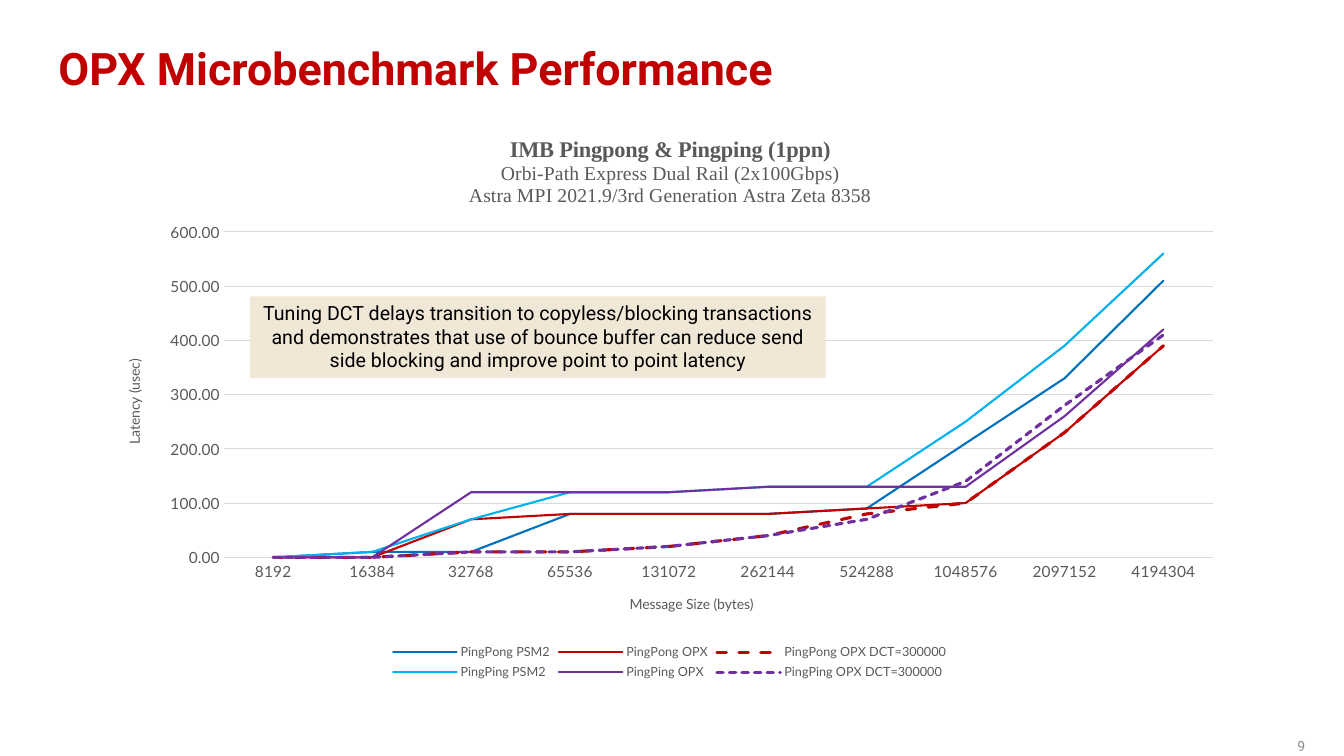
from dataclasses import dataclass

from lxml import etree
from pptx import Presentation
from pptx.chart.data import CategoryChartData
from pptx.dml.color import RGBColor
from pptx.enum import chart as charts, dml, shapes, text
from pptx.oxml.ns import qn
from pptx.util import Inches, Pt


@dataclass(frozen=True)
class Theme:
    """Colours, fonts and type sizes of the slide."""
    red: str = "C00000"
    blue: str = "0070C0"
    sky: str = "00B0F0"
    purple: str = "7030A0"
    black: str = "000000"
    grey: str = "595959"
    pale_grey: str = "8C8C8C"
    grid: str = "D9D9D9"
    sand: str = "F0E7D7"
    body: str = "Roboto"
    labels: str = "Lato"
    serif: str = "Times New Roman"
    heading: int = 32
    chart_heading: int = 16
    note: int = 14
    ticks: int = 11
    small: int = 10
    legend: int = 9


THEME = Theme()
SLIDE_SIZE = (13.33, 7.5)
CHART_BOX = (1.02, 1.14, 11.24, 5.65)
SIZES = [2 ** power for power in range(13, 23)]
LATENCIES = [
    ("PingPong PSM2", THEME.blue, None,
     (0, 10, 10, 80, 80, 80, 90, 210, 330, 510)),
    ("PingPong OPX", THEME.red, None,
     (0, 0, 70, 80, 80, 80, 90, 100, 230, 390)),
    ("PingPong OPX DCT=300000", THEME.red, dml.MSO_LINE.DASH,
     (0, 0, 10, 10, 20, 40, 80, 100, 230, 390)),
    ("PingPing PSM2", THEME.sky, None,
     (0, 10, 70, 120, 120, 130, 130, 250, 390, 560)),
    ("PingPing OPX", THEME.purple, None,
     (0, 0, 120, 120, 120, 130, 130, 130, 260, 420)),
    ("PingPing OPX DCT=300000", THEME.purple, dml.MSO_LINE.SQUARE_DOT,
     (0, 0, 10, 10, 20, 40, 70, 140, 280, 410)),
]


def style(font, size, face, color, bold=False):
    """Set size, typeface, colour and weight of a font."""
    font.size, font.name, font.bold = Pt(size), face, bold
    font.color.rgb = RGBColor.from_string(color)


def write(paragraph, words, *look, **weight):
    """Add one styled run to a paragraph."""
    run = paragraph.add_run()
    run.text = words
    style(run.font, *look, **weight)


def draw_line(line, color, width, dash=None):
    """Set colour, width and dash of a line."""
    line.color.rgb = RGBColor.from_string(color)
    line.width = Pt(width)
    if dash is not None:
        line.dash_style = dash


def arrange(element, index, *box):
    """Place a chart part by inches from the chart's corner."""
    for previous in element.findall(qn("c:layout")):
        element.remove(previous)
    layout = etree.Element(qn("c:layout"))
    manual = etree.SubElement(layout, qn("c:manualLayout"))
    if index == 0:
        etree.SubElement(manual, qn("c:layoutTarget"), val="inner")
    for mode in ("xMode", "yMode"):
        etree.SubElement(manual, qn(f"c:{mode}"), val="edge")
    for key, length, whole in zip("xywh", box, CHART_BOX[2:] * 2):
        etree.SubElement(manual, qn(f"c:{key}"), val=str(length / whole))
    element.insert(index, layout)


def add_heading(slide, box):
    """Fill the title placeholder."""
    heading = slide.shapes.title
    heading.left, heading.top, heading.width, heading.height = map(Inches, box)
    frame = heading.text_frame
    frame.auto_size = text.MSO_AUTO_SIZE.NONE
    frame.vertical_anchor = text.MSO_ANCHOR.MIDDLE
    line = frame.paragraphs[0]
    line.alignment, line.line_spacing = text.PP_ALIGN.LEFT, 0.9
    write(line, "OPX Microbenchmark Performance",
          THEME.heading, THEME.body, THEME.red, bold=True)


def add_page_number(slide, box):
    """Write the page number in the corner."""
    frame = slide.shapes.add_textbox(*map(Inches, box)).text_frame
    frame.word_wrap = True
    frame.vertical_anchor = text.MSO_ANCHOR.MIDDLE
    write(frame.paragraphs[0], "9", THEME.small, THEME.body, THEME.pale_grey)


def title_chart(chart):
    """Write the three lines above the plot."""
    chart.has_title = True
    frame = chart.chart_title.text_frame
    write(frame.paragraphs[0], "IMB Pingpong & Pingping (1ppn)",
          THEME.chart_heading, THEME.serif, THEME.grey, bold=True)
    for words in ("Orbi-Path Express Dual Rail (2x100Gbps)",
                  "Astra MPI 2021.9/3rd Generation Astra Zeta 8358"):
        write(frame.add_paragraph(), words, THEME.note, THEME.serif, THEME.grey)
    arrange(chart.chart_title._element, 1, 3.6, 0.17)


def format_axis(axis, words, x, y):
    """Title an axis and set its labels."""
    axis.major_tick_mark = axis.minor_tick_mark = charts.XL_TICK_MARK.NONE
    style(axis.tick_labels.font, THEME.ticks, THEME.labels, THEME.grey)
    write(axis.axis_title.text_frame.paragraphs[0], words,
          THEME.small, THEME.labels, THEME.grey)
    arrange(axis.axis_title._element, 1, x, y)


def add_latency_chart(slide, box):
    """Chart latency against message size."""
    data = CategoryChartData(number_format="0.00")
    data.categories = [str(size) for size in SIZES]
    for name, _, _, values in LATENCIES:
        data.add_series(name, values)
    chart = slide.shapes.add_chart(
        charts.XL_CHART_TYPE.LINE, *map(Inches, box), data).chart
    style(chart.font, THEME.small, THEME.labels, THEME.black)
    title_chart(chart)

    sizes, latency = chart.category_axis, chart.value_axis
    format_axis(sizes, "Message Size (bytes)", 5.2, 4.73)
    format_axis(latency, "Latency (usec)", 0.19, 2.4)
    draw_line(sizes.format.line, THEME.grid, 0.75)
    latency.format.line.fill.background()
    draw_line(latency.major_gridlines.format.line, THEME.grid, 0.75)
    latency.minimum_scale, latency.maximum_scale = 0, 600
    latency.major_unit = 100
    latency.tick_labels.number_format = "0.00"
    latency.tick_labels.number_format_is_linked = False

    plot = chart.plots[0]
    plot.vary_by_categories = False
    for series, (_, color, dash, _) in zip(plot.series, LATENCIES):
        series.smooth = False
        series.marker.style = charts.XL_MARKER_STYLE.NONE
        draw_line(series.format.line, color, 2.25 if dash else 1.5, dash)
        series.format.line._get_or_add_ln().set("cap", "rnd")
    arrange(chart._chartSpace.chart.plotArea, 0, 1.2, 1.16, 9.81, 3.23)

    chart.has_legend = True
    chart.legend.position = charts.XL_LEGEND_POSITION.BOTTOM
    chart.legend.include_in_layout = False
    style(chart.legend.font, THEME.legend, THEME.labels, THEME.grey)
    arrange(chart.legend._element, 1, 2.83, 5.21, 5.58, 0.45)


def add_finding(slide, box):
    """Lay the finding over the plot."""
    finding = slide.shapes.add_shape(
        shapes.MSO_SHAPE.RECTANGLE, *map(Inches, box))
    finding.shadow.inherit = False
    finding.fill.solid()
    finding.fill.fore_color.rgb = RGBColor.from_string(THEME.sand)
    finding.line.fill.background()
    frame = finding.text_frame
    frame.word_wrap = True
    frame.vertical_anchor = text.MSO_ANCHOR.TOP
    line = frame.paragraphs[0]
    line.alignment = text.PP_ALIGN.CENTER
    write(line, "Tuning DCT delays transition to copyless/blocking transactions "
          "and demonstrates that use of bounce buffer can reduce send side "
          "blocking and improve point to point latency",
          THEME.note, THEME.body, THEME.black)


def main():
    """Build and save the slide."""
    deck = Presentation()
    deck.slide_width, deck.slide_height = map(Inches, SLIDE_SIZE)
    slide = deck.slides.add_slide(deck.slide_layouts[5])
    add_heading(slide, (0.48, 0.26, 11.5, 0.88))
    add_page_number(slide, (12.77, 7.27, 0.49, 0.26))
    add_latency_chart(slide, CHART_BOX)
    add_finding(slide, (2.48, 2.94, 5.71, 0.81))
    deck.save("out.pptx")


if __name__ == "__main__":
    main()
